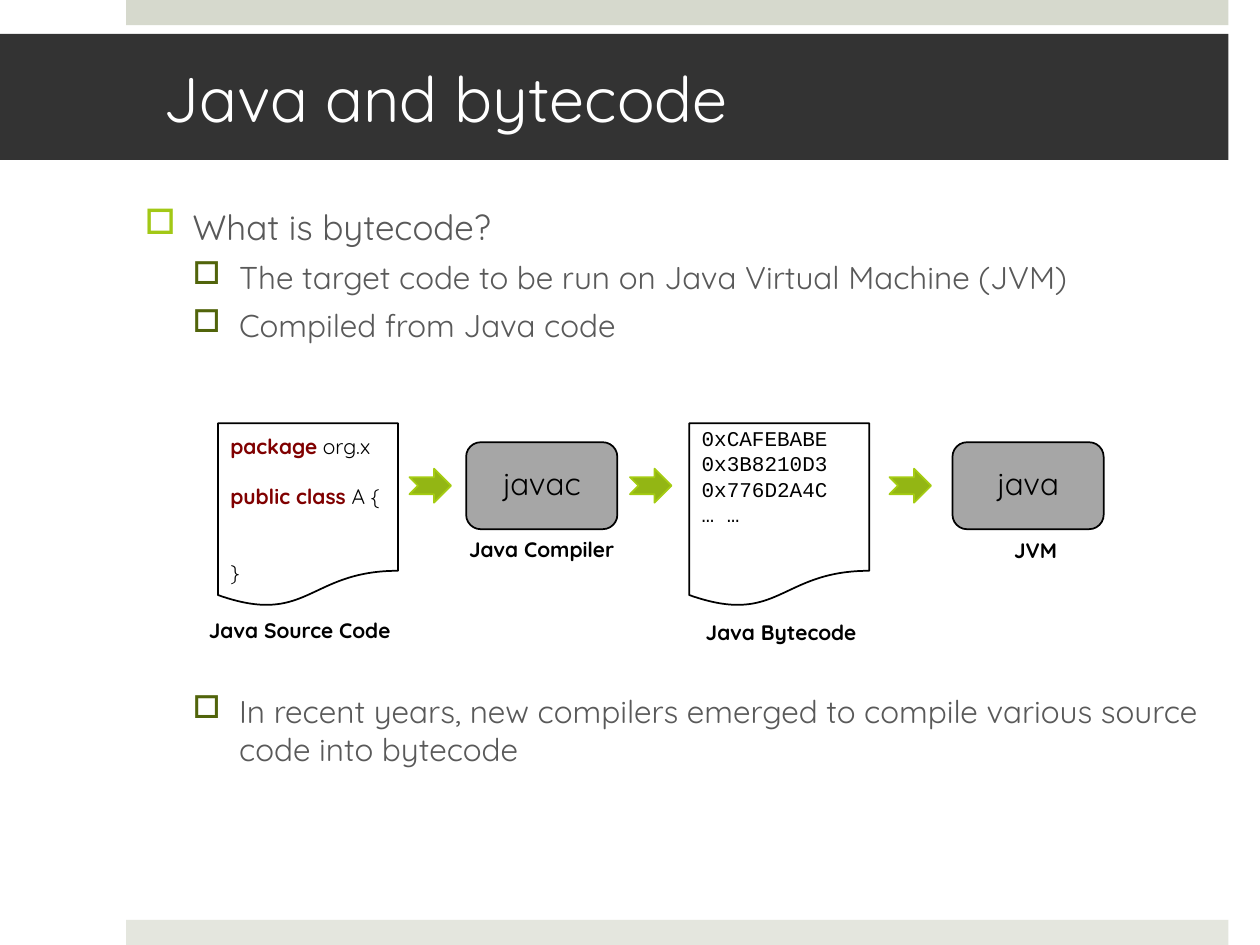
from lxml.etree import SubElement
from pptx import Presentation
from pptx.dml.color import RGBColor as RGB
from pptx.enum.shapes import MSO_SHAPE as SHAPE
from pptx.enum.text import MSO_ANCHOR as ANCHOR, PP_ALIGN as ALIGN
from pptx.oxml.ns import qn
from pptx.util import Pt

PX = 9144
C = {"top": "D6D9CD", "bottom": "E4E6DE", "title": "333333", "white": "FFFFFF",
     "body": "595959", "bullet": "A2C816", "sub": "51640B", "black": "000000",
     "tool": "A6A6A6", "arrow": "93B614", "edge": "A5CC12", "keyword": "800000"}

prs = Presentation()
prs.slide_width, prs.slide_height = 1000 * PX, 750 * PX
s = prs.slides.add_slide(prs.slide_layouts[6])


def add_shape(kind, box, fill, line=None):
    sp = s.shapes.add_shape(kind, *[v * PX for v in box])
    sp.shadow.inherit = False
    sp.fill.solid()
    sp.fill.fore_color.rgb = RGB.from_string(C[fill])
    if line:
        sp.line.color.rgb = RGB.from_string(C[line])
        sp.line.width = Pt(1)
    else:
        sp.line.fill.background()
    return sp


def write(sp, paragraphs, align=ALIGN.LEFT, color="black", **font):
    tf = sp.text_frame
    tf.word_wrap = True
    for i, (before, runs) in enumerate(paragraphs):
        p = tf.add_paragraph() if i else tf.paragraphs[0]
        p.alignment = align
        p.space_before = Pt(before)
        for text, special in runs:
            r = p.add_run()
            r.text = text
            values = {"name": "Quicksand", "size": Pt(12), **font, **special}
            shade = values.pop("color", color)
            for key, value in values.items():
                setattr(r.font, key, value)
            r.font.color.rgb = RGB.from_string(C[shade])
    return tf


add_shape(SHAPE.RECTANGLE, (100, 0, 875, 20), "top")
add_shape(SHAPE.RECTANGLE, (100, 730, 875, 20), "bottom")
title = add_shape(SHAPE.RECTANGLE, (0, 27, 975, 100), "title")
tf = write(title, [(0, [("Java and bytecode", {})])], color="white", size=Pt(36))
frame = {"margin_left": 130 * PX, "margin_right": 30 * PX, "vertical_anchor": ANCHOR.MIDDLE}
for key, value in frame.items():
    setattr(tf, key, value)

body = s.shapes.add_textbox(*[v * PX for v in (105, 158, 870, 527)])
points = [
    (0, 0, "What is bytecode?"),
    (1, 6, "The target code to be run on Java Virtual Machine (JVM)"),
    (1, 6, "Compiled from Java code"),
    (1, 199, "In recent years, new compilers emerged to compile various source code into bytecode"),
]
tf = write(body, [(before, [(text, {"size": Pt(18 if level else 20)})])
                  for level, before, text in points], color="body")
for p, (level, before, text) in zip(tf.paragraphs, points):
    p.level = level
    pPr = p._p.get_or_add_pPr()
    pPr.set("marL", str((75 if level else 38) * PX))
    pPr.set("indent", str((-37 if level else -38) * PX))
    color = SubElement(pPr, qn("a:buClr"))
    SubElement(color, qn("a:srgbClr")).set("val", C["sub" if level else "bullet"])
    SubElement(pPr, qn("a:buChar")).set("char", "□")

for x in (173, 547):
    add_shape(SHAPE.FLOWCHART_DOCUMENT, (x, 336, 143, 146), "white", "black")
for x in (325, 500, 706):
    add_shape(SHAPE.NOTCHED_RIGHT_ARROW, (x, 372, 33, 27), "arrow", "edge")
for x, name in ((370, "javac"), (756, "java")):
    add_shape(SHAPE.FLOWCHART_ALTERNATE_PROCESS, (x, 351, 120, 69), "tool", "black")
    sp = s.shapes.add_textbox(*[v * PX for v in (x, 363, 120, 40)])
    write(sp, [(0, [(name, {})])], ALIGN.CENTER, size=Pt(18))

keyword = {"bold": True, "color": "keyword"}
source = s.shapes.add_textbox(*[v * PX for v in (173, 339, 144, 131)])
write(source, [
    (0, [("package", keyword), (" org.x", {})]),
    (14.5, [("public class", keyword), (" A {", {})]),
    (29, [("}", {})]),
])
bytecode = s.shapes.add_textbox(*[v * PX for v in (547, 333, 144, 91)])
lines = ("0xCAFEBABE", "0x3B8210D3", "0x776D2A4C", "… …")
write(bytecode, [(0, [(line, {})]) for line in lines], name="Courier New")

for x, y, w, label in (
    (358, 421, 144, "Java Compiler"),
    (750, 422, 144, "JVM"),
    (151, 485, 174, "Java Source Code"),
    (533, 487, 174, "Java Bytecode"),
):
    sp = s.shapes.add_textbox(*[v * PX for v in (x, y, w, 30)])
    write(sp, [(0, [(label, {})])], ALIGN.CENTER, bold=True)

prs.save("out.pptx")
